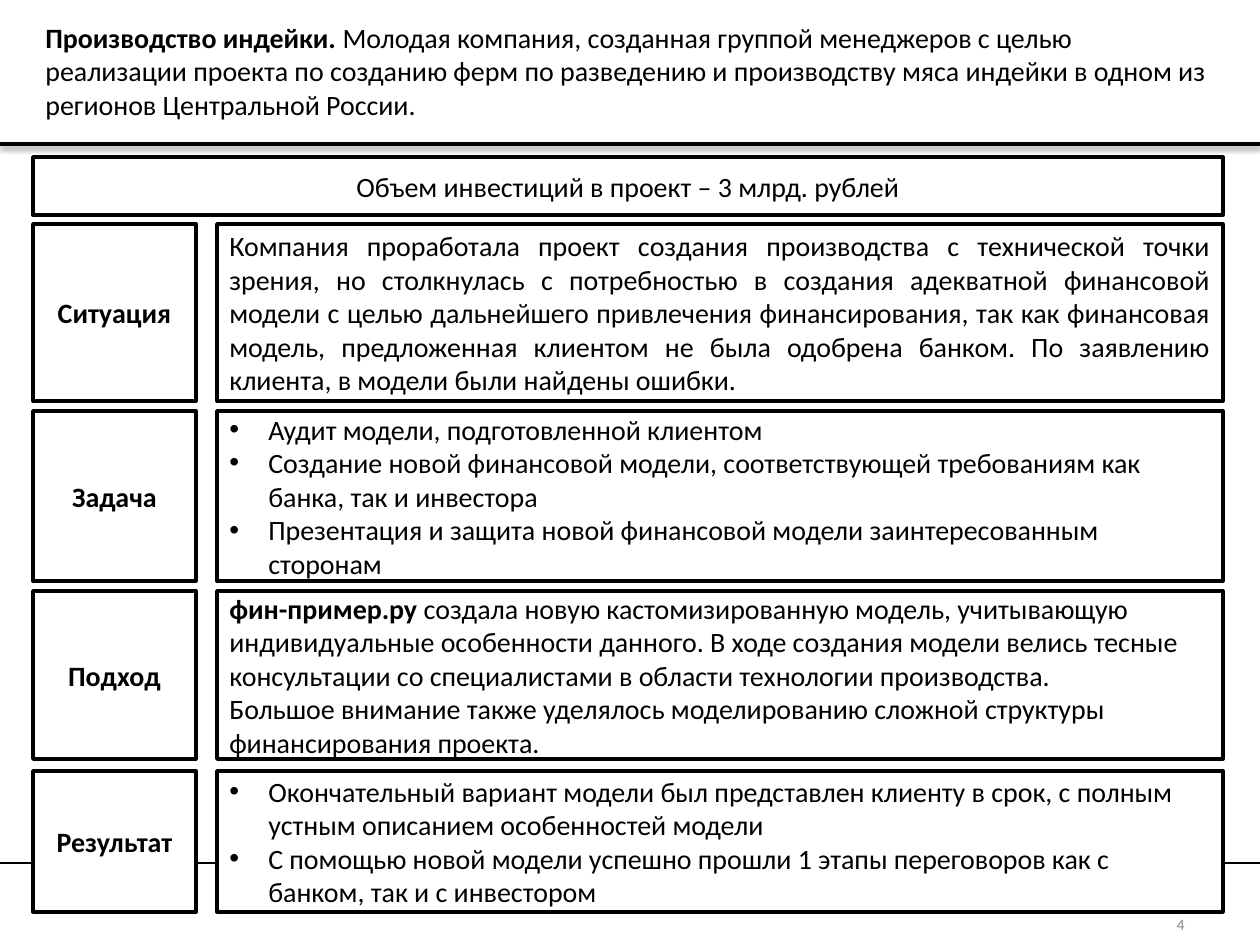
import pptx
import pptx.dml.color
import pptx.enum.shapes
import pptx.enum.text
import pptx.oxml
import pptx.oxml.ns
import pptx.util

BLACK = pptx.dml.color.RGBColor(0x00, 0x00, 0x00)
WHITE = pptx.dml.color.RGBColor(0xFF, 0xFF, 0xFF)
GREY = pptx.dml.color.RGBColor(0x8C, 0x8C, 0x8C)
ALIGN = pptx.enum.text.PP_ALIGN
FONT = "Calibri"
PX_PER_INCH = 126
SLIDE_WIDTH, SLIDE_HEIGHT = 1260, 945
LEFT, WIDTH = 33, 1190
LABEL_WIDTH, BODY_OFFSET = 163, 184
BULLET_INDENT = 39

TITLE = [[
    ("Производство индейки. ", True),
    ("Молодая компания, созданная группой менеджеров с целью реализации проекта по созданию ферм "
     "по разведению и производству мяса индейки в одном из регионов Центральной России.", False),
]]
INVESTMENT = "Объем инвестиций в проект – 3 млрд. рублей"
SECTIONS = [
    (224, 177, "Ситуация", [
        "Компания проработала проект создания производства с технической точки зрения, но столкнулась "
        "с потребностью в создания адекватной финансовой модели с целью дальнейшего привлечения "
        "финансирования, так как финансовая модель, предложенная клиентом не была одобрена банком. "
        "По заявлению клиента, в модели были найдены ошибки.",
    ], {"align": ALIGN.JUSTIFY}),
    (411, 170, "Задача", [
        "Аудит модели, подготовленной клиентом",
        "Создание новой финансовой модели, соответствующей требованиям как банка, так и инвестора",
        "Презентация и защита новой финансовой модели заинтересованным сторонам",
    ], {"bullet": True}),
    (591, 168, "Подход", [
        [("фин-пример.ру ", True),
         ("создала новую кастомизированную модель, учитывающую индивидуальные особенности данного. "
          "В ходе создания модели велись тесные консультации со специалистами в области технологии "
          "производства.", False)],
        "Большое внимание также уделялось моделированию сложной структуры финансирования проекта.",
    ], {}),
    (771, 141, "Результат", [
        "Окончательный вариант модели был представлен клиенту в срок, с полным устным описанием "
        "особенностей модели",
        "С помощью новой модели успешно прошли 1 этапы переговоров как с банком, так и с инвестором",
    ], {"bullet": True}),
]


def px(length):
    """Turn px into EMU."""
    return pptx.util.Emu(round(length * pptx.util.Inches(1) / PX_PER_INCH))


def add_bullet(paragraph):
    """Give a paragraph a round bullet with a hanging indent."""
    properties = paragraph._p.get_or_add_pPr()
    properties.set("marL", str(px(BULLET_INDENT)))
    properties.set("indent", str(-px(BULLET_INDENT)))
    namespace = pptx.oxml.ns.nsdecls("a")
    properties.append(pptx.oxml.parse_xml(f'<a:buFont {namespace} typeface="Arial"/>'))
    properties.append(pptx.oxml.parse_xml(f'<a:buChar {namespace} char="•"/>'))


def write_text(shape, paragraphs, size=16, color=BLACK, bold=False, align=ALIGN.LEFT, bullet=False):
    """Fill a shape with paragraphs, each a string or a list of (text, bold) runs."""
    frame = shape.text_frame
    frame.word_wrap = True
    frame.vertical_anchor = pptx.enum.text.MSO_ANCHOR.MIDDLE
    for index, content in enumerate(paragraphs):
        paragraph = frame.add_paragraph() if index else frame.paragraphs[0]
        paragraph.alignment = align
        if bullet:
            add_bullet(paragraph)
        runs = [(content, bold)] if isinstance(content, str) else content
        for text, run_bold in runs:
            run = paragraph.add_run()
            run.text = text
            run.font.name = FONT
            run.font.size = pptx.util.Pt(size)
            run.font.bold = run_bold
            run.font.color.rgb = color


def add_rule(slide, y, weight, effect=""):
    """Draw a line across the slide, with an optional effect."""
    rule = slide.shapes.add_connector(
        pptx.enum.shapes.MSO_CONNECTOR.STRAIGHT, 0, px(y), px(SLIDE_WIDTH), px(y))
    rule.line.color.rgb = BLACK
    rule.line.width = pptx.util.Pt(weight)
    namespace = pptx.oxml.ns.nsdecls("a")
    rule._element.spPr.append(
        pptx.oxml.parse_xml(f"<a:effectLst {namespace}>{effect}</a:effectLst>"))


def add_text(slide, left, top, width, height, paragraphs, **text_format):
    """Place unframed text in the given box."""
    box = slide.shapes.add_textbox(px(left), px(top), px(width), px(height))
    write_text(box, paragraphs, **text_format)


def add_frame(slide, left, top, width, height, paragraphs, **text_format):
    """Place text in a white box with a black outline."""
    frame = slide.shapes.add_shape(
        pptx.enum.shapes.MSO_SHAPE.RECTANGLE, px(left), px(top), px(width), px(height))
    frame.shadow.inherit = False
    frame.fill.solid()
    frame.fill.fore_color.rgb = WHITE
    frame.line.color.rgb = BLACK
    frame.line.width = pptx.util.Pt(2)
    write_text(frame, paragraphs, **text_format)


def add_section(slide, left, top, width, height, label, paragraphs, **text_format):
    """Place a label box and the body box beside it."""
    add_frame(slide, left, top, LABEL_WIDTH, height, [label], bold=True, align=ALIGN.CENTER)
    add_frame(slide, left + BODY_OFFSET, top, width - BODY_OFFSET, height, paragraphs, **text_format)


def add_rules(slide):
    """Draw the footer line and the shadowed header line."""
    shadow = (f'<a:outerShdw blurRad="{pptx.util.Pt(3.1)}" dist="{pptx.util.Pt(1.6)}" dir="5400000" '
              'rotWithShape="0"><a:srgbClr val="000000"><a:alpha val="38000"/></a:srgbClr></a:outerShdw>')
    add_rule(slide, 863, 0.75)
    add_rule(slide, 144, 2, shadow)


def main():
    """Build the case slide and save it."""
    presentation = pptx.Presentation()
    presentation.slide_width, presentation.slide_height = px(SLIDE_WIDTH), px(SLIDE_HEIGHT)
    slide = presentation.slides.add_slide(presentation.slide_layouts[6])
    add_rules(slide)
    add_text(slide, LEFT, 17, WIDTH, 107, TITLE)
    add_frame(slide, LEFT, 157, WIDTH, 58, [INVESTMENT], align=ALIGN.CENTER)
    add_text(slide, 903, 899, 294, 50, ["4"], size=9, color=GREY, align=ALIGN.RIGHT)
    for top, height, label, paragraphs, text_format in SECTIONS:
        add_section(slide, LEFT, top, WIDTH, height, label, paragraphs, **text_format)
    presentation.save("out.pptx")


if __name__ == "__main__":
    main()
